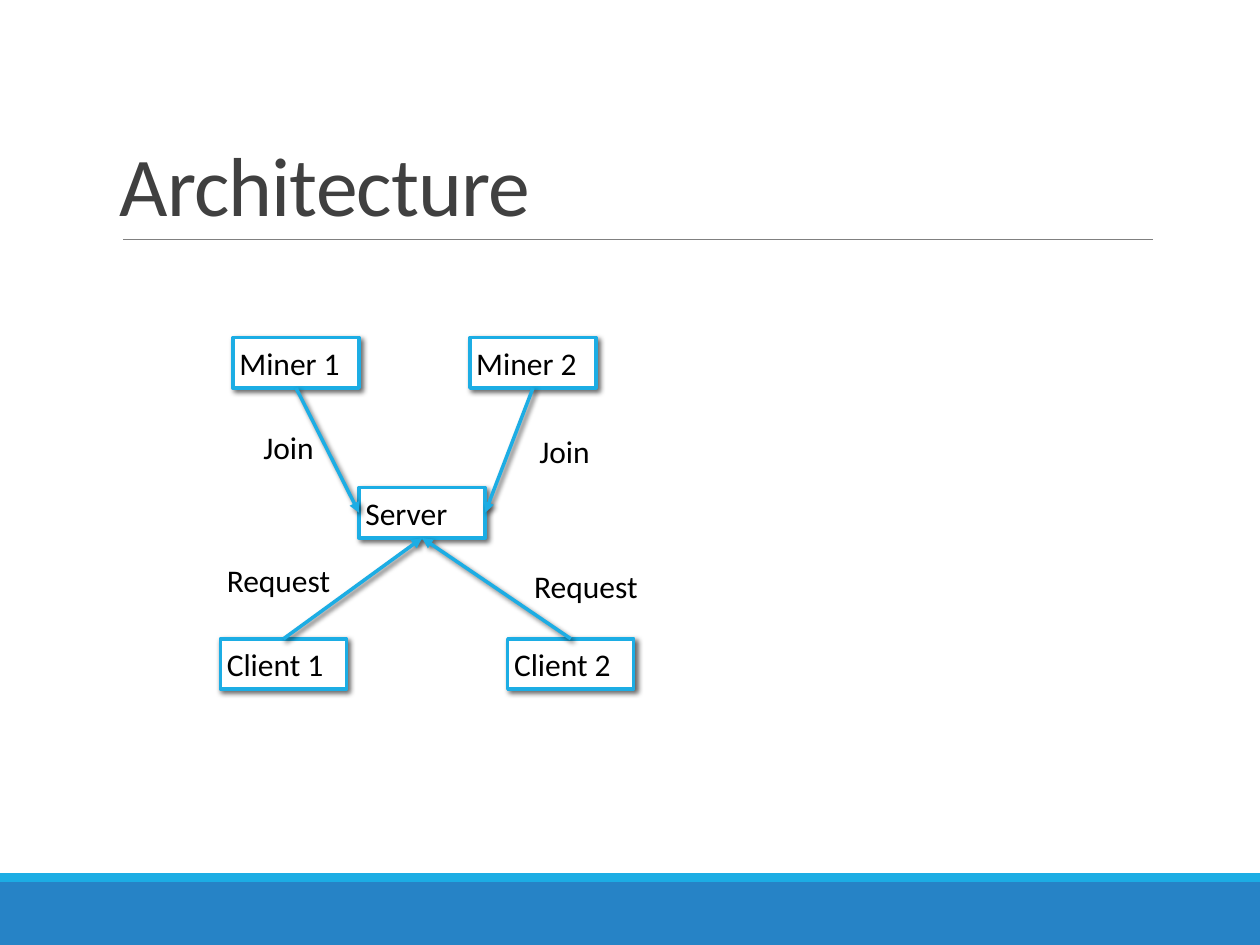
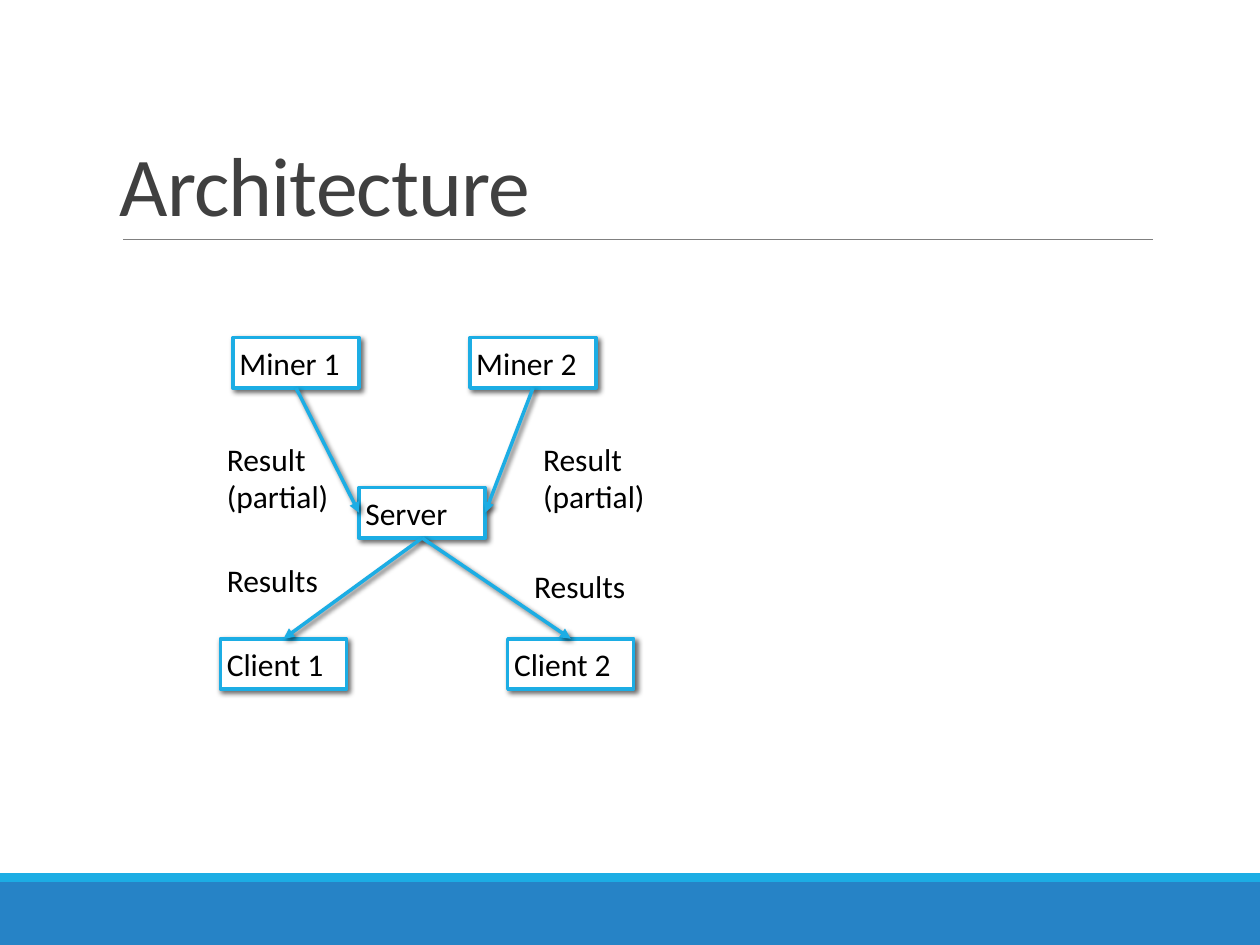
from dataclasses import dataclass

from lxml import etree
from pptx import Presentation
from pptx.dml.color import RGBColor
from pptx.enum.shapes import MSO_CONNECTOR, MSO_SHAPE
from pptx.enum.text import MSO_ANCHOR, MSO_AUTO_SIZE, PP_ALIGN
from pptx.oxml.ns import qn
from pptx.util import Inches, Pt


@dataclass(frozen=True)
class Theme:
    font: str = "Calibri"
    title_size: float = 47.8
    body_size: float = 18
    title: str = "404040"
    text: str = "000000"
    paper: str = "FFFFFF"
    accent: str = "1CADE4"
    band: str = "2683C6"
    rule: str = "808080"
    inset: float = 0.05
    line_width: float = 2


THEME = Theme()

# Boxes: left, top, width, height in inches
TITLE_BOX = (0.9, 0.31, 8.25, 1.59)
FOOTER_BOX = (0, 6.93, 10, 0.57)
DIAGRAM_BOX = (1.75, 2.68, 3.28, 2.79)

# Nodes: left and top within the diagram box, all of one size
NODE_WIDTH, NODE_HEIGHT = 1, 0.4
NODES = {
    "Miner 1": (0.1, 0),
    "Miner 2": (1.98, 0),
    "Server": (1.1, 1.19),
    "Client 1": (0, 2.39),
    "Client 2": (2.28, 2.39),
}

# Connection sites of a rectangle
TOP, LEFT, BOTTOM, RIGHT = range(4)
MINER_LINKS = [
    (("Miner 1", BOTTOM), ("Server", LEFT)),
    (("Miner 2", BOTTOM), ("Server", RIGHT)),
]
CLIENT_LINKS = [
    (("Client 1", TOP), ("Server", BOTTOM)),
    (("Client 2", TOP), ("Server", BOTTOM)),
]
REPLY_LINKS = [(end, start) for start, end in CLIENT_LINKS]

# Labels: lines of text, then left, top, width, height within the diagram box
JOIN_LABELS = [
    (["Join"], (2.48, 0.7, 0.51, 0.4)),
    (["Join"], (0.29, 0.67, 0.51, 0.4)),
    (["Request"], (0, 1.72, 0.93, 0.4)),
    (["Request"], (2.44, 1.77, 0.93, 0.4)),
]
RESULT_LABELS = [
    (["Result", "(partial)"], (2.51, 0.76, 0.92, 0.71)),
    (["Result", "(partial)"], (0, 0.76, 0.92, 0.71)),
    (["Results"], (0, 1.72, 0.83, 0.4)),
    (["Results"], (2.44, 1.77, 0.83, 0.4)),
]


def color(value):
    return RGBColor.from_string(value)


def lengths(*values):
    return [Inches(value) for value in values]


def set_frame(frame, anchor=MSO_ANCHOR.TOP, wrap=True, grow=True):
    frame.margin_left = frame.margin_right = Inches(THEME.inset)
    frame.margin_top = frame.margin_bottom = Inches(THEME.inset)
    frame.vertical_anchor = anchor
    frame.word_wrap = wrap
    frame.auto_size = MSO_AUTO_SIZE.SHAPE_TO_FIT_TEXT if grow else MSO_AUTO_SIZE.NONE


def write_lines(frame, lines, size=THEME.body_size, font_color=THEME.text):
    for index, line in enumerate(lines):
        paragraph = frame.add_paragraph() if index else frame.paragraphs[0]
        paragraph.alignment = PP_ALIGN.LEFT
        run = paragraph.add_run()
        run.text = line
        run.font.name = THEME.font
        run.font.size = Pt(size)
        run.font.color.rgb = color(font_color)


def set_effects(shape, shadow=True):
    """Give the shape a soft drop shadow, or none at all."""
    effects = etree.SubElement(shape._element.spPr, qn("a:effectLst"))
    if shadow:
        outer = etree.SubElement(
            effects, qn("a:outerShdw"), blurRad=str(Pt(3)), dist=str(Pt(2)),
            dir=str(45 * 60000), algn="ctr", rotWithShape="0")
        black = etree.SubElement(outer, qn("a:srgbClr"), val=THEME.text)
        etree.SubElement(black, qn("a:alpha"), val="60000")


def add_rectangle(slide, box, fill, outline=None):
    shape = slide.shapes.add_shape(MSO_SHAPE.RECTANGLE, *lengths(*box))
    shape.fill.solid()
    shape.fill.fore_color.rgb = color(fill)
    if outline:
        shape.line.color.rgb = color(outline)
        shape.line.width = Pt(THEME.line_width)
    else:
        shape.line.fill.background()
    set_effects(shape, shadow=bool(outline))
    return shape


def add_line(slide, points, line_color, width):
    line = slide.shapes.add_connector(MSO_CONNECTOR.STRAIGHT, *lengths(*points))
    line.line.color.rgb = color(line_color)
    line.line.width = Pt(width)
    return line


def add_footer(slide, box):
    left, top, width, height = box
    strip = 0.07
    add_rectangle(slide, (left, top + strip, width, height - strip), THEME.band)
    add_rectangle(slide, (left, top, width, strip), THEME.accent)


def add_title(slide, box, title):
    left, top, width, height = box
    # Rule along the lower edge
    bottom = top + height
    rule = add_line(slide, (left + 0.08, bottom, left + width, bottom), THEME.rule, 0.5)
    set_effects(rule, shadow=False)
    # Title text
    frame = slide.shapes.add_textbox(*lengths(*box)).text_frame
    set_frame(frame, MSO_ANCHOR.BOTTOM, grow=False)
    write_lines(frame, [title], THEME.title_size, THEME.title)
    paragraph = frame.paragraphs[0]
    paragraph.line_spacing = 0.85
    paragraph.runs[0].font._element.set("spc", "-50")


def add_node(slide, name, left, top):
    node = add_rectangle(slide, (left, top, NODE_WIDTH, NODE_HEIGHT),
                         THEME.paper, THEME.accent)
    set_frame(node.text_frame, MSO_ANCHOR.MIDDLE)
    write_lines(node.text_frame, [name])
    return node


def add_arrow(slide, nodes, start, end):
    arrow = add_line(slide, (0, 0, 0, 0), THEME.accent, THEME.line_width)
    arrow.begin_connect(nodes[start[0]], start[1])
    arrow.end_connect(nodes[end[0]], end[1])
    etree.SubElement(arrow.line._get_or_add_ln(), qn("a:tailEnd"), type="triangle")
    set_effects(arrow)


def add_diagram(slide, box, links, labels):
    left, top = box[:2]
    # Nodes
    nodes = {name: add_node(slide, name, left + x, top + y)
             for name, (x, y) in NODES.items()}
    # Arrows
    for start, end in links:
        add_arrow(slide, nodes, start, end)
    # Message labels
    for lines, (x, y, width, height) in labels:
        label = slide.shapes.add_textbox(*lengths(left + x, top + y, width, height))
        set_frame(label.text_frame, wrap=False)
        write_lines(label.text_frame, lines)


def add_architecture_slide(presentation, links, labels):
    slide = presentation.slides.add_slide(presentation.slide_layouts[6])
    add_footer(slide, FOOTER_BOX)
    add_title(slide, TITLE_BOX, "Architecture")
    add_diagram(slide, DIAGRAM_BOX, links, labels)


def main():
    presentation = Presentation()
    presentation.slide_width, presentation.slide_height = lengths(10, 7.5)
    add_architecture_slide(presentation, MINER_LINKS + CLIENT_LINKS, JOIN_LABELS)
    add_architecture_slide(presentation, MINER_LINKS + REPLY_LINKS, RESULT_LABELS)
    presentation.save("out.pptx")


if __name__ == "__main__":
    main()
